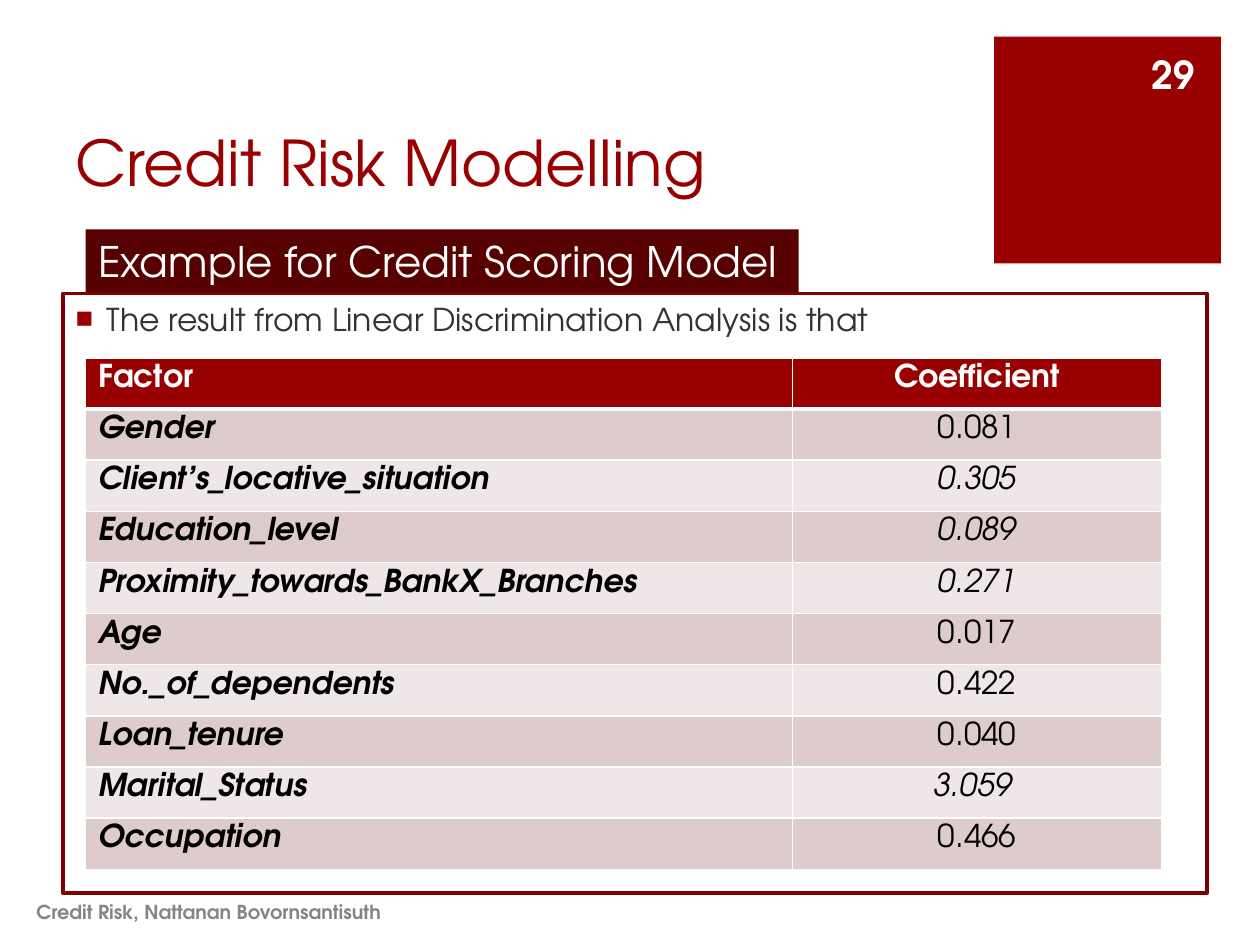
"""Build the credit scoring slide with its coefficient table."""
from dataclasses import dataclass
from typing import Optional

from lxml.etree import SubElement
from pptx import Presentation
from pptx.dml.color import RGBColor
from pptx.enum.shapes import MSO_SHAPE
from pptx.enum.text import MSO_ANCHOR, PP_ALIGN
from pptx.oxml.ns import qn
from pptx.util import Inches, Pt

FONT = "TeX Gyre Adventor"
UNIT = 0.1
COLORS = {
    "red": "990000", "frame": "800000", "banner": "580101", "white": "FFFFFF",
    "black": "000000", "body": "333333", "footer": "858585",
    "band_dark": "DECCCC", "band_light": "EFE7E7",
}


@dataclass
class Box:
    """A block placed on a grid of 100 columns by 75 rows."""
    col: float
    row: float
    cols: float
    rows: float
    text: str = ""
    size: int = 18
    color: str = "white"
    bold: bool = False
    align: PP_ALIGN = PP_ALIGN.LEFT
    anchor: MSO_ANCHOR = MSO_ANCHOR.TOP
    fill: Optional[str] = None
    line: Optional[str] = None
    wrap: bool = True
    bullet: bool = False


@dataclass
class Factor:
    """A table row: factor name, coefficient and its slant."""
    name: str
    value: str
    italic: bool = False


BOXES = [
    Box(78.9, 2.9, 18, 18, fill="red"),
    Box(5, 3.8, 71.2, 12.5, "Credit Risk Modelling", 36, "red", anchor=MSO_ANCHOR.BOTTOM),
    Box(5, 23.3, 90.8, 47.6, "The result from Linear Discrimination Analysis is that",
        color="body", line="frame", bullet=True),
    Box(1.9, 70.4, 65.7, 4, "Credit Risk, Nattanan Bovornsantisuth", 11, "footer",
        bold=True, anchor=MSO_ANCHOR.MIDDLE),
    Box(90.3, 3.9, 5.5, 4, "29", 22, bold=True, align=PP_ALIGN.RIGHT,
        anchor=MSO_ANCHOR.MIDDLE),
    Box(6.8, 18.2, 56.6, 5, "Example for Credit Scoring Model", 24,
        fill="banner", wrap=False),
]
FACTORS = [
    Factor("Gender", "0.081"),
    Factor("Client’s_locative_situation", "0.305", True),
    Factor("Education_level", "0.089", True),
    Factor("Proximity_towards_BankX_Branches", "0.271", True),
    Factor("Age", "0.017"),
    Factor("No._of_dependents", "0.422"),
    Factor("Loan_tenure", "0.040"),
    Factor("Marital_Status", "3.059 ", True),
    Factor("Occupation", "0.466"),
]


def rgb(name: str) -> RGBColor:
    return RGBColor.from_string(COLORS[name])


def grid(*units: float) -> list:
    return [Inches(u * UNIT) for u in units]


def format_text(p, size: int, color: str, bold: bool, italic: bool, align: PP_ALIGN) -> None:
    p.alignment = align
    for r in p.runs:
        r.font.name, r.font.size = FONT, Pt(size)
        r.font.bold, r.font.italic = bold, italic
        r.font.color.rgb = rgb(color)


def add_bullet(p) -> None:
    pPr = p._p.get_or_add_pPr()
    pPr.set("marL", str(Inches(0.25)))
    pPr.set("indent", str(-Inches(0.25)))
    clr = SubElement(pPr, qn("a:buClr"))
    SubElement(clr, qn("a:srgbClr"), val=COLORS["red"])
    SubElement(pPr, qn("a:buSzPct"), val="80000")
    SubElement(pPr, qn("a:buFont"), typeface=FONT)
    SubElement(pPr, qn("a:buChar"), char="■")


def add_box(s, box: Box) -> None:
    place = grid(box.col, box.row, box.cols, box.rows)
    if box.fill or box.line:
        sp = s.shapes.add_shape(MSO_SHAPE.RECTANGLE, *place)
        sp.shadow.inherit = False
    else:
        sp = s.shapes.add_textbox(*place)
    if box.fill:
        sp.fill.solid()
        sp.fill.fore_color.rgb = rgb(box.fill)
    else:
        sp.fill.background()
    if box.line:
        sp.line.color.rgb = rgb(box.line)
        sp.line.width = Pt(2.25)
    else:
        sp.line.fill.background()
    if not box.text:
        return
    tf = sp.text_frame
    tf.text = box.text
    tf.word_wrap = box.wrap
    tf.vertical_anchor = box.anchor
    p = tf.paragraphs[0]
    format_text(p, box.size, box.color, box.bold, False, box.align)
    if box.bullet:
        add_bullet(p)


def set_borders(cell, top: float, bottom: float) -> None:
    tcPr = cell._tc.get_or_add_tcPr()
    widths = {"lnL": 1, "lnR": 1, "lnT": top, "lnB": bottom}
    for i, (tag, width) in enumerate(widths.items()):
        ln = SubElement(tcPr, qn(f"a:{tag}"), w=str(Pt(width)))
        fill = SubElement(ln, qn("a:solidFill"))
        SubElement(fill, qn("a:srgbClr"), val=COLORS["white"])
        tcPr.insert(i, ln)


def add_factor_table(s, factors: list) -> None:
    rows = [Factor("Factor", "Coefficient"), *factors]
    table = s.shapes.add_table(len(rows), 2, *grid(6.8, 28.4, 85.4, 40.6)).table
    for column, width in zip(table.columns, grid(56.1, 29.3)):
        column.width = width
    for i, row in enumerate(rows):
        head = i == 0
        fill = "red" if head else ("band_dark" if i % 2 else "band_light")
        for j, text in enumerate((row.name, row.value)):
            cell = table.cell(i, j)
            cell.text = text
            cell.fill.solid()
            cell.fill.fore_color.rgb = rgb(fill)
            set_borders(cell, 3 if i == 1 else 1, 3 if head else 1)
            name = j == 0
            format_text(cell.text_frame.paragraphs[0], 18, "white" if head else "black",
                        head or name, not head and (name or row.italic),
                        PP_ALIGN.LEFT if name else PP_ALIGN.CENTER)


def main() -> None:
    prs = Presentation()
    prs.slide_width, prs.slide_height = grid(100, 75)
    s = prs.slides.add_slide(prs.slide_layouts[6])
    for box in BOXES:
        add_box(s, box)
    add_factor_table(s, FACTORS)
    prs.save("out.pptx")


if __name__ == "__main__":
    main()
